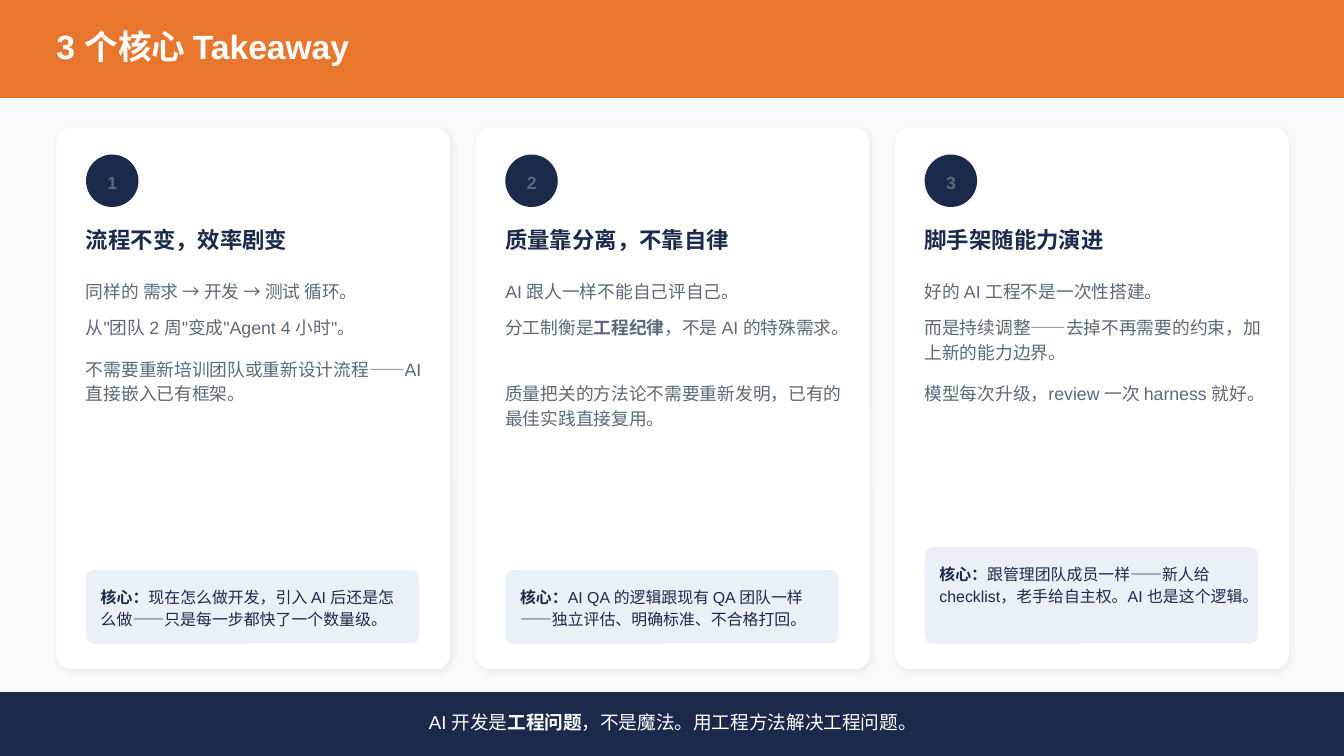
"""Build the three core takeaways slide."""
from lxml import etree
from pptx import Presentation
from pptx.dml.color import RGBColor
from pptx.enum.shapes import MSO_SHAPE as SHAPE
from pptx.enum.text import PP_ALIGN as ALIGN
from pptx.oxml.ns import qn
from pptx.util import Inches, Pt

ORANGE = RGBColor(0xE8, 0x76, 0x2D)
NAVY = RGBColor(0x1B, 0x2A, 0x4A)
GRAY = RGBColor(0x5A, 0x6A, 0x7A)
PALE = RGBColor(0xEB, 0xF0, 0xF7)
PAGE = RGBColor(0xF8, 0xF9, 0xFA)
WHITE = RGBColor(0xFF, 0xFF, 0xFF)

CARDS = [
    ("流程不变，效率剧变",
     [("同样的 需求 → 开发 → 测试 循环。", 1),
      ("从\"团队 2 周\"变成\"Agent 4 小时\"。", 1),
      ("不需要重新培训团队或重新设计流程——AI 直接嵌入已有框架。", 2)],
     "现在怎么做开发，引入 AI 后还是怎么做——只是每一步都快了一个数量级。", 2),
    ("质量靠分离，不靠自律",
     [("AI 跟人一样不能自己评自己。", 1),
      ("分工制衡是**工程纪律**，不是 AI 的特殊需求。", 2),
      ("质量把关的方法论不需要重新发明，已有的最佳实践直接复用。", 2)],
     "AI QA 的逻辑跟现有 QA 团队一样——独立评估、明确标准、不合格打回。", 2),
    ("脚手架随能力演进",
     [("好的 AI 工程不是一次性搭建。", 1),
      ("而是持续调整——去掉不再需要的约束，加上新的能力边界。", 2),
      ("模型每次升级，review 一次 harness 就好。", 2)],
     "跟管理团队成员一样——新人给 checklist，老手给自主权。AI 也是这个逻辑。", 3),
]

prs = Presentation()
prs.slide_width = Inches(10)
prs.slide_height = Inches(10) * 9 // 16
s = prs.slides.add_slide(prs.slide_layouts[6])
s.background.fill.solid()
s.background.fill.fore_color.rgb = PAGE


def add_box(kind, x, y, w, h, color, radius=None):
    sp = s.shapes.add_shape(kind, Inches(x), Inches(y), Inches(w), Inches(h))
    sp.shadow.inherit = False
    sp.fill.solid()
    sp.fill.fore_color.rgb = color
    sp.line.fill.background()
    if radius:
        sp.adjustments[0] = radius / min(w, h)
    return sp


def add_text(text, x, y, w, h, size=9.5, color=GRAY, bold=False, align=ALIGN.LEFT, leading=None):
    tf = s.shapes.add_textbox(Inches(x), Inches(y), Inches(w), Inches(h)).text_frame
    tf.margin_left = tf.margin_right = tf.margin_top = tf.margin_bottom = 0
    tf.word_wrap = True
    p = tf.paragraphs[0]
    p.alignment = align
    if leading:
        p.line_spacing = Pt(leading)
    for i, part in enumerate(text.split("**")):
        if part:
            r = p.add_run()
            r.text = part
            r.font.name = "Arial"
            r.font.size = Pt(size)
            r.font.bold = bold or i % 2 == 1
            r.font.color.rgb = color


add_box(SHAPE.RECTANGLE, 0, 0, 10, 0.73, ORANGE)
add_text("3 个核心 Takeaway", 0.42, 0.19, 9.35, 0.34, size=18, color=WHITE, bold=True)

for i, (title, points, core, core_lines) in enumerate(CARDS):
    x = 0.42 + i * 3.12
    left = x + 0.22
    card = add_box(SHAPE.ROUNDED_RECTANGLE, x, 0.95, 2.93, 4.03, WHITE, radius=0.11)
    effects = card._element.spPr.find(qn("a:effectLst"))
    shadow = etree.SubElement(effects, qn("a:outerShdw"), blurRad=str(Pt(3)), dist=str(Pt(1.1)),
                              dir="2700000", algn="bl", rotWithShape="0")
    black = etree.SubElement(shadow, qn("a:srgbClr"), val="000000")
    etree.SubElement(black, qn("a:alpha"), val="6000")

    add_box(SHAPE.ROUNDED_RECTANGLE, left, 1.15, 0.39, 0.39, NAVY, radius=1)
    add_text(str(i + 1), left + 0.16, 1.25, 0.07, 0.18, bold=True, leading=13.3)
    add_text(title, left, 1.68, 2.53, 0.23, size=12, color=NAVY, bold=True)

    y = 2.06
    for gap, (text, lines) in zip((0.09, 0.13, 0), points):
        height = 0.18 * lines
        add_text(text, left, y, 2.53, height, leading=13.3)
        y += height + gap

    height = 0.21 + 0.17 * core_lines
    top = 4.79 - height
    add_box(SHAPE.ROUNDED_RECTANGLE, left, top, 2.48, height, PALE, radius=0.06)
    add_text("**核心：**" + core, left + 0.11, top + 0.11, 2.3, height - 0.22,
             size=8.5, color=NAVY, leading=11.9)

add_box(SHAPE.RECTANGLE, 0, 5.15, 10, 0.48, NAVY)
add_text("AI 开发是**工程问题**，不是魔法。用工程方法解决工程问题。", 0.33, 5.29, 9.35, 0.2,
         size=10, color=WHITE, align=ALIGN.CENTER)

prs.save("out.pptx")
